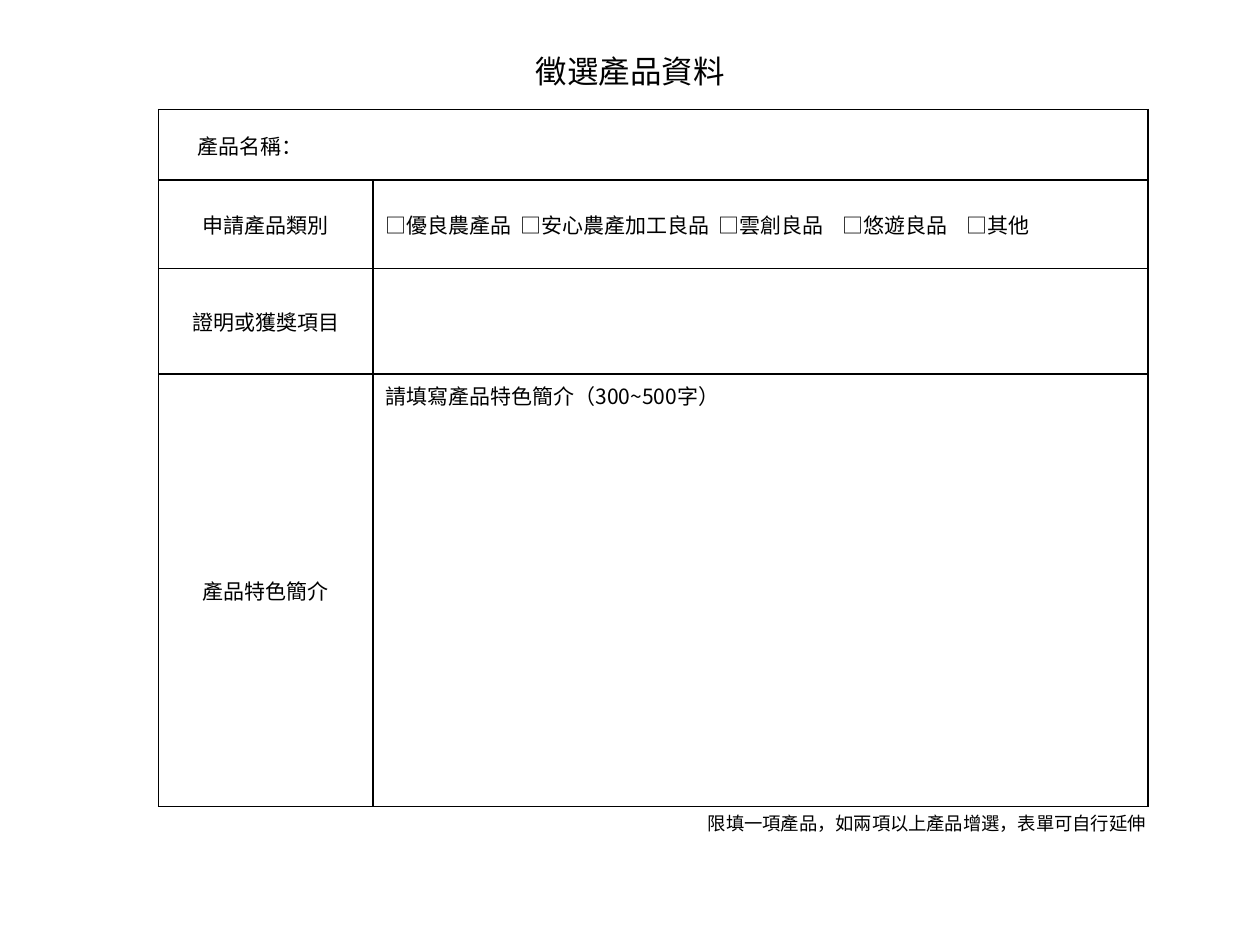
import pptx
import pptx.dml.color
import pptx.enum.text
import pptx.oxml
import pptx.oxml.ns
import pptx.util
from lxml import etree

Inches, Pt = pptx.util.Inches, pptx.util.Pt
ALIGN, ANCHOR = pptx.enum.text.PP_ALIGN, pptx.enum.text.MSO_ANCHOR
qn = pptx.oxml.ns.qn

# Content
FONT, INK, PAPER = "Noto Sans CJK SC", "000000", "FFFFFF"
TITLE = "徵選產品資料"
PRODUCT_NAME = "產品名稱："
CATEGORIES = ["優良農產品", "安心農產加工良品", "雲創良品", "悠遊良品", "其他"]
CATEGORY_TABS = [1.07, 2.64, 3.63, 4.61]
FORM_ROWS = [
    ("申請產品類別", "\t".join("□" + name for name in CATEGORIES), ANCHOR.MIDDLE),
    ("證明或獲獎項目", "", ANCHOR.MIDDLE),
    ("產品特色簡介", "請填寫產品特色簡介（300~500字）", ANCHOR.TOP),
]
FOOTNOTE = "限填一項產品，如兩項以上產品增選，表單可自行延伸"
COLUMN_WIDTHS = [1.7, 6.15]
ROW_HEIGHTS = [0.56, 0.7, 0.84, 3.43]


def colour(hex_string):
    return pptx.dml.color.RGBColor.from_string(hex_string)


def write(frame, text, size, align=ALIGN.LEFT):
    paragraph = frame.paragraphs[0]
    paragraph.alignment = align
    run = paragraph.add_run()
    run.text = text
    run.font.size = Pt(size)
    run.font.name = FONT
    run.font.color.rgb = colour(INK)
    etree.SubElement(run.font._element, qn("a:ea"), typeface=FONT)
    return paragraph


def add_tab_stops(paragraph, positions):
    stops = etree.SubElement(paragraph._p.get_or_add_pPr(), qn("a:tabLst"))
    for position in positions:
        etree.SubElement(stops, qn("a:tab"), pos=str(Inches(position)), algn="l")


def format_cell(cell):
    cell.fill.solid()
    cell.fill.fore_color.rgb = colour(PAPER)
    properties = cell._tc.get_or_add_tcPr()
    for index, side in enumerate(("lnL", "lnR", "lnT", "lnB")):
        line = etree.Element(qn("a:" + side), w=str(Pt(1)))
        fill = etree.SubElement(line, qn("a:solidFill"))
        etree.SubElement(fill, qn("a:srgbClr"), val=INK)
        properties.insert(index, line)


presentation = pptx.Presentation()
presentation.slide_width, presentation.slide_height = Inches(10), Inches(7.5)
slide = presentation.slides.add_slide(presentation.slide_layouts[5])

# Title
title = slide.shapes.title
title.left, title.top = Inches(4.14), Inches(0.36)
title.width, title.height = Inches(1.72), Inches(0.4)
title.text_frame.word_wrap = False
title.text_frame.vertical_anchor = ANCHOR.TOP
write(title.text_frame, TITLE, 18, ALIGN.CENTER)

# Form table
table = slide.shapes.add_table(
    len(ROW_HEIGHTS), len(COLUMN_WIDTHS), Inches(1.26), Inches(0.87),
    Inches(sum(COLUMN_WIDTHS)), Inches(sum(ROW_HEIGHTS))).table
table.first_row = table.horz_banding = False
for column, width in zip(table.columns, COLUMN_WIDTHS):
    column.width = Inches(width)
for row, height in zip(table.rows, ROW_HEIGHTS):
    row.height = Inches(height)
    for cell in row.cells:
        format_cell(cell)

name_cell = table.cell(0, 0)
name_cell.merge(table.cell(0, 1))
name_cell.margin_left = Inches(0.31)
name_cell.vertical_anchor = ANCHOR.MIDDLE
write(name_cell.text_frame, PRODUCT_NAME, 12)

for index, (label, entry, anchor) in enumerate(FORM_ROWS, start=1):
    label_cell, entry_cell = table.cell(index, 0), table.cell(index, 1)
    label_cell.vertical_anchor = ANCHOR.MIDDLE
    write(label_cell.text_frame, label, 12, ALIGN.CENTER)
    entry_cell.vertical_anchor = anchor
    if entry:
        paragraph = write(entry_cell.text_frame, entry, 12)
        if "\t" in entry:
            add_tab_stops(paragraph, CATEGORY_TABS)

# Footnote
footnote = slide.shapes.add_textbox(Inches(5.52), Inches(6.4), Inches(3.74), Inches(0.28))
footnote.text_frame.word_wrap = True
write(footnote.text_frame, FOOTNOTE, 10.5)

presentation.save("out.pptx")
